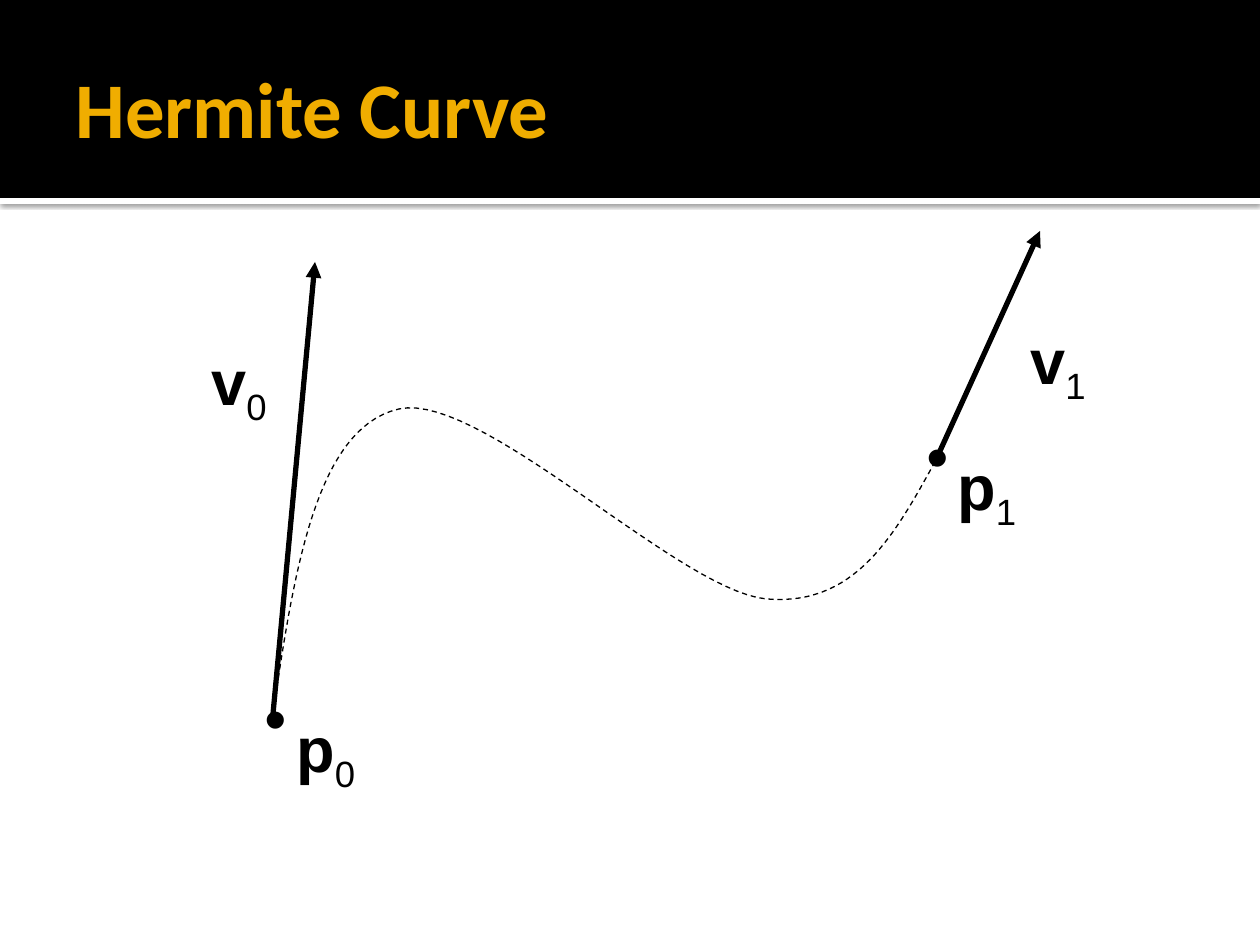
from lxml import etree
from pptx import Presentation
from pptx.dml.color import RGBColor
from pptx.enum.dml import MSO_LINE
from pptx.enum.shapes import MSO_CONNECTOR, MSO_SHAPE
from pptx.enum.text import MSO_ANCHOR, MSO_AUTO_SIZE, PP_ALIGN
from pptx.oxml import parse_xml
from pptx.oxml.ns import nsdecls, qn
from pptx.util import Emu, Pt

BLACK = RGBColor(0x00, 0x00, 0x00)
WHITE = RGBColor(0xFF, 0xFF, 0xFF)
GOLD = RGBColor(0xF0, 0xAD, 0x00)
RECTANGLE = MSO_SHAPE.RECTANGLE
STRAIGHT = MSO_CONNECTOR.STRAIGHT
SCALE = 914400 / 126  # EMU in one px

TITLE = "Hermite Curve"
TITLE_BOX = (63, 21, 1134, 173)
STRIPE_BOX = (0, 198, 1260, 6)
BANNER_BOX = (0, 0, 1260, 198)

P0, P1 = (273, 714), (935, 462)
TANGENTS = [(P0, (315, 262)), (P1, (1040, 231))]
# Each piece: two control points and an end point
CURVE = [
    ((294, 571), (316, 428), (399, 409)),
    ((481, 391), (678, 590), (766, 599)),
    ((856, 607), (895, 534), P1),
]
STEPS = 30

# Symbol, subscript, box
LABELS = [
    ("•", "", (252, 672, 53, 88)),
    ("•", "", (914, 410, 53, 88)),
    ("v", "1", (1018, 315, 84, 88)),
    ("p", "1", (945, 441, 116, 88)),
    ("p", "0", (284, 703, 105, 88)),
    ("v", "0", (199, 336, 84, 88)),
]


def px(*lengths):
    return [Emu(round(length * SCALE)) for length in lengths]


def style_run(run, font_name, size, color, bold):
    run.font.name = font_name
    run.font.size = Pt(size)
    run.font.color.rgb = color
    run.font.bold = bold


def add_band(slide, box, color):
    band = slide.shapes.add_shape(RECTANGLE, *px(*box))
    band.shadow.inherit = False
    band.fill.solid()
    band.fill.fore_color.rgb = color
    band.line.fill.background()
    return band


def add_soft_shadow(shape):
    effects = shape._element.spPr.find(qn("a:effectLst"))
    effects.append(parse_xml(
        f'<a:outerShdw {nsdecls("a")} blurRad="{Pt(2.5)}" dist="{Pt(0.8)}" '
        'dir="5400000" rotWithShape="0"><a:srgbClr val="000000">'
        '<a:alpha val="60000"/></a:srgbClr></a:outerShdw>'))


def set_title(slide):
    title = slide.shapes.title
    title.left, title.top, title.width, title.height = px(*TITLE_BOX)
    frame = title.text_frame
    frame.text = TITLE
    frame.vertical_anchor = MSO_ANCHOR.MIDDLE
    frame.margin_left = Pt(7.2)
    frame.margin_right = frame.margin_top = frame.margin_bottom = Pt(3.6)
    para = frame.paragraphs[0]
    para.alignment = PP_ALIGN.LEFT
    style_run(para.runs[0], "Calibri", 45, GOLD, True)


def bezier(start, first, second, end, t):
    weights = ((1 - t) ** 3, 3 * t * (1 - t) ** 2, 3 * t * t * (1 - t), t ** 3)
    return tuple(sum(w * p[axis] for w, p in zip(weights, (start, first, second, end)))
                 for axis in (0, 1))


def add_curve(slide):
    points, start = [], P0
    for first, second, end in CURVE:
        points += [bezier(start, first, second, end, step / STEPS)
                   for step in range(1, STEPS + 1)]
        start = end
    builder = slide.shapes.build_freeform(*px(*P0), scale=1.0)
    builder.add_line_segments([px(*point) for point in points], close=False)
    curve = builder.convert_to_shape()
    curve.shadow.inherit = False
    curve.fill.background()
    curve.line.color.rgb = BLACK
    curve.line.width = Pt(0.75)
    curve.line.dash_style = MSO_LINE.DASH


def add_arrow(slide, start, end):
    arrow = slide.shapes.add_connector(STRAIGHT, *px(*start, *end))
    arrow.line.color.rgb = BLACK
    arrow.line.width = Pt(3)
    etree.SubElement(arrow.line._get_or_add_ln(), qn("a:tailEnd"), type="triangle")
    etree.SubElement(arrow._element.spPr, qn("a:effectLst"))


def add_label(slide, symbol, subscript, box):
    frame = slide.shapes.add_textbox(*px(*box)).text_frame
    frame.word_wrap = True
    frame.auto_size = MSO_AUTO_SIZE.SHAPE_TO_FIT_TEXT
    para = frame.paragraphs[0]
    space_before = etree.SubElement(para._p.get_or_add_pPr(), qn("a:spcBef"))
    etree.SubElement(space_before, qn("a:spcPct"), val="50000")
    run = para.add_run()
    run.text = symbol
    style_run(run, "Arial", 36, BLACK, bool(subscript))
    if subscript:
        run = para.add_run()
        run.text = subscript
        style_run(run, "Arial", 36, BLACK, False)
        run._r.get_or_add_rPr().set("baseline", "-25000")


def main():
    deck = Presentation()
    deck.slide_width, deck.slide_height = px(1260, 945)
    slide = deck.slides.add_slide(deck.slide_layouts[5])
    add_soft_shadow(add_band(slide, STRIPE_BOX, WHITE))
    add_band(slide, BANNER_BOX, BLACK)
    title = slide.shapes.title._element
    title.getparent().append(title)  # bring the title in front of the banner
    set_title(slide)
    add_curve(slide)
    for start, end in TANGENTS:
        add_arrow(slide, start, end)
    for symbol, subscript, box in LABELS:
        add_label(slide, symbol, subscript, box)
    deck.save("out.pptx")


if __name__ == "__main__":
    main()
